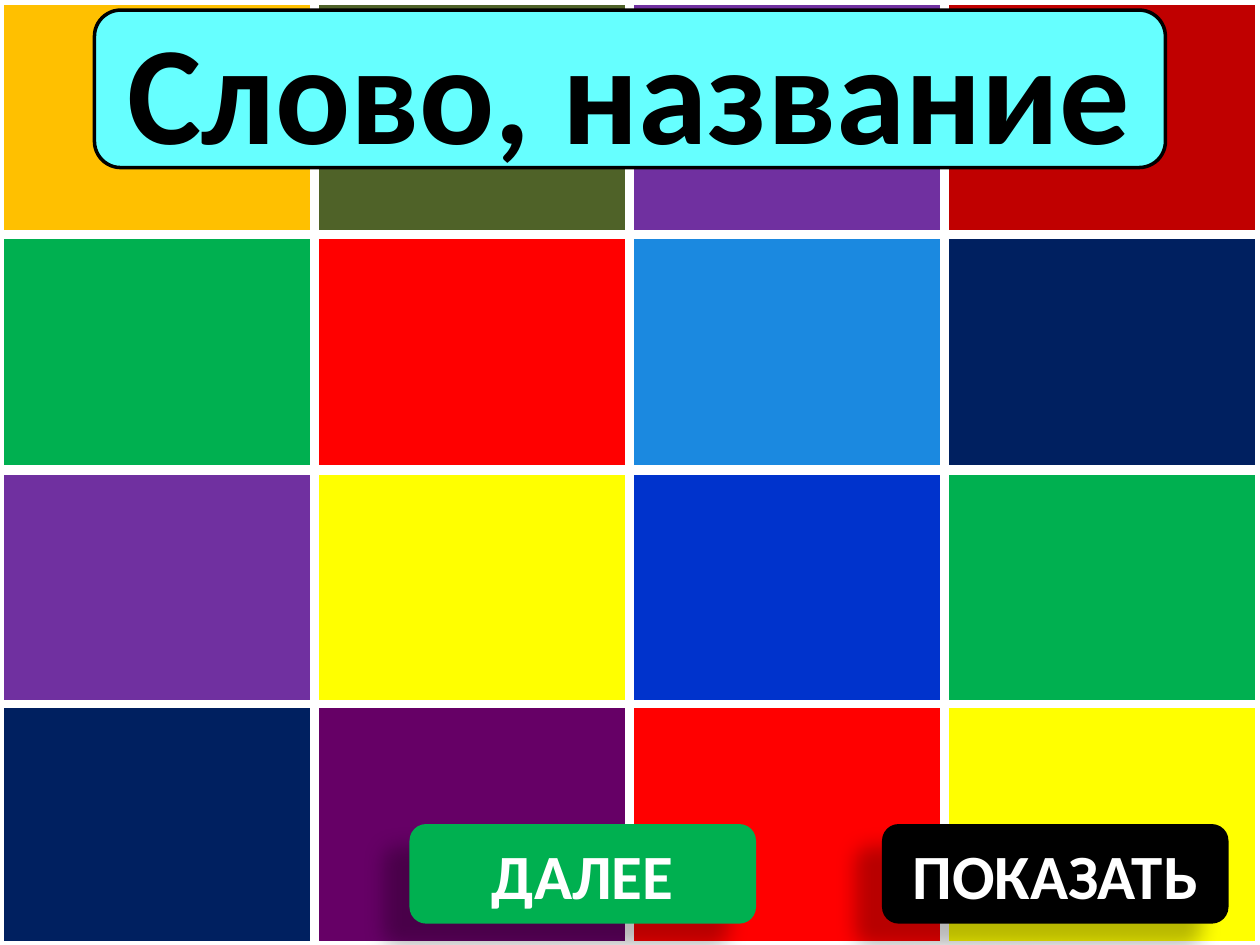
import dataclasses

import lxml.etree
import pptx
import pptx.dml.color
import pptx.enum.shapes
import pptx.enum.text
import pptx.oxml.ns
import pptx.util

Inches = pptx.util.Inches
Pt = pptx.util.Pt
Kind = pptx.enum.shapes.MSO_SHAPE


@dataclasses.dataclass(frozen=True)
class Theme:
    font: str = "Calibri"
    black: str = "000000"
    white: str = "FFFFFF"
    green: str = "00B050"
    cyan: str = "66FFFF"
    navy: str = "002060"
    purple: str = "7030A0"
    plum: str = "660066"
    red: str = "FF0000"
    crimson: str = "C00000"
    yellow: str = "FFFF00"
    amber: str = "FFC000"
    olive: str = "4F6228"
    sky: str = "1B89E0"
    blue: str = "0033CC"
    title: int = 80
    label: int = 36


@dataclasses.dataclass(frozen=True)
class Row:
    top: float
    height: float
    fills: tuple[str, ...]


@dataclasses.dataclass(frozen=True)
class Button:
    text: str
    left: float
    fill: str


LOOK = Theme()
LEFT, PITCH, WIDTH = 0.01, 2.5, 2.47
ROWS = (
    Row(0.02, 1.83, (LOOK.amber, LOOK.olive, LOOK.purple, LOOK.crimson)),
    Row(1.88, 1.83, (LOOK.green, LOOK.red, LOOK.sky, LOOK.navy)),
    Row(3.75, 1.83, (LOOK.purple, LOOK.yellow, LOOK.blue, LOOK.green)),
    Row(5.6, 1.89, (LOOK.navy, LOOK.plum, LOOK.red, LOOK.yellow)),
)
BUTTONS = (
    Button("ПОКАЗАТЬ", 7, LOOK.black),
    Button("ДАЛЕЕ", 3.25, LOOK.green),
)


def rgb(color: str) -> pptx.dml.color.RGBColor:
    return pptx.dml.color.RGBColor.from_string(color)


def box(slide, kind, left: float, top: float, width: float, height: float,
        fill: str, line: str | None = None, weight: float = 1):
    shape = slide.shapes.add_shape(
        kind, Inches(left), Inches(top), Inches(width), Inches(height))
    shape.shadow.inherit = False
    shape.fill.solid()
    shape.fill.fore_color.rgb = rgb(fill)
    if line:
        shape.line.color.rgb = rgb(line)
        shape.line.width = Pt(weight)
    else:
        shape.line.fill.background()
    return shape


def write(shape, text: str, *, size: int, color: str, bold: bool = True) -> None:
    frame = shape.text_frame
    frame.word_wrap = True
    frame.vertical_anchor = pptx.enum.text.MSO_ANCHOR.MIDDLE
    para = frame.paragraphs[0]
    para.alignment = pptx.enum.text.PP_ALIGN.CENTER
    run = para.add_run()
    run.text = text
    run.font.name = LOOK.font
    run.font.size = Pt(size)
    run.font.bold = bold
    run.font.color.rgb = rgb(color)


def shade(shape, color: str, alpha: int, blur: float, dist: float, angle: int) -> None:
    """Cast an outer shadow; alpha in percent, blur and dist in points."""
    qn = pptx.oxml.ns.qn
    effects = shape._element.spPr.find(qn("a:effectLst"))
    outer = lxml.etree.SubElement(
        effects, qn("a:outerShdw"), blurRad=str(Pt(blur)), dist=str(Pt(dist)),
        dir=str(angle * 60000), algn="tl", rotWithShape="0")
    tint = lxml.etree.SubElement(outer, qn("a:srgbClr"), val=color)
    lxml.etree.SubElement(tint, qn("a:alpha"), val=str(alpha * 1000))


def draw_row(slide, row: Row) -> None:
    for col, fill in enumerate(row.fills):
        box(slide, Kind.RECTANGLE, LEFT + col * PITCH, row.top, WIDTH,
            row.height, fill, LOOK.white, 3)


def draw_button(slide, button: Button) -> None:
    shape = box(slide, Kind.ROUNDED_RECTANGLE, button.left, 6.54, 2.75, 0.79,
                button.fill)
    shade(shape, LOOK.black, alpha=28, blur=11.8, dist=19.7, angle=141)
    write(shape, button.text, size=LOOK.label, color=LOOK.white)


def main() -> None:
    deck = pptx.Presentation()
    deck.slide_width, deck.slide_height = Inches(10), Inches(7.5)
    slide = deck.slides.add_slide(deck.slide_layouts[6])
    for row in ROWS:
        draw_row(slide, row)
    title = box(slide, Kind.ROUNDED_RECTANGLE, 0.75, 0.08, 8.5, 1.25,
                LOOK.cyan, LOOK.black, 2)
    write(title, "Слово, название", size=LOOK.title, color=LOOK.black)
    for button in BUTTONS:
        draw_button(slide, button)
    deck.save("out.pptx")


if __name__ == "__main__":
    main()
